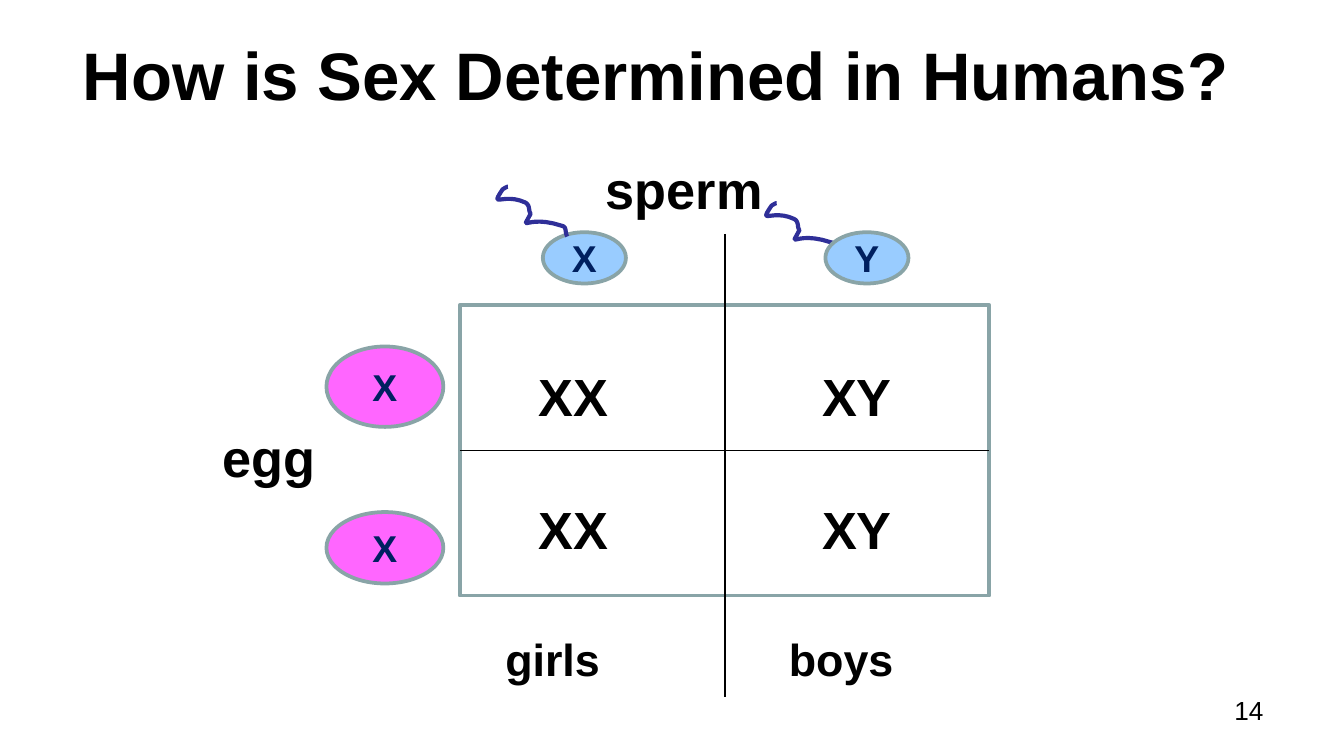
from typing import NamedTuple

import pptx
import pptx.dml.color
import pptx.enum.shapes
import pptx.enum.text
import pptx.oxml
import pptx.oxml.ns
import pptx.util

Cm = pptx.util.Cm
Pt = pptx.util.Pt
ALIGN = pptx.enum.text.PP_ALIGN
ANCHOR = pptx.enum.text.MSO_ANCHOR

COLOURS = {
    "black": "000000",
    "outline": "89A4A7",
    "sperm": "99CCFF",
    "tail": "2F2F98",
    "egg": "FF66FF",
    "chromosome": "002060",
}

SQUARE_LEFT, SQUARE_TOP, SQUARE_WIDTH, SQUARE_HEIGHT = 8.69, 5.77, 10.01, 5.49
SQUARE_MIDDLE = SQUARE_LEFT + SQUARE_WIDTH / 2

# Bezier points of a tail in cm, measured from the sperm head
TAIL = [
    (0, 0), (-0.05, -0.08), (0, -0.18), (-0.10, -0.20),
    (-0.79, -0.43), (-0.89, -0.05), (-0.69, -0.43),
    (-0.74, -0.48), (-0.69, -0.58), (-0.79, -0.64),
    (-1.22, -0.84), (-1.47, -0.51), (-1.22, -0.89),
    (-1.19, -0.91), (-1.14, -0.94), (-1.12, -0.94),
]
CURVE_STEPS = 12


class Label(NamedTuple):
    text: str
    left: float
    top: float
    width: float
    height: float = 1.35
    size: int = 28
    bold: bool = True
    align: ALIGN = ALIGN.LEFT


class Cell(NamedTuple):
    chromosome: str
    kind: str
    left: float
    top: float
    width: float
    height: float


GENOTYPES = [
    Label(text, left, top, 2.74)
    for top in (6.76, 9.27)
    for text, left in (("XX", 9.93), ("XY", 15.29))
]
LABELS = [
    Label("sperm", 11.2, 2.84, 5.21),
    Label("egg", 3.96, 7.92, 3.4),
    *GENOTYPES,
    Label("girls", 9.3, 11.81, 3.43, 1.19, 24),
    Label("boys", 14.66, 11.81, 3.73, 1.19, 24),
    Label("14", 18.21, 13.0, 5.92, 0.99, 14, False, ALIGN.RIGHT),
]
SPERM_X = Cell("X", "sperm", 10.26, 4.39, 1.57, 0.97)
SPERM_Y = Cell("Y", "sperm", 15.6, 4.39, 1.57, 0.97)
EGGS = [
    Cell("X", "egg", 6.17, 6.55, 2.21, 1.52),
    Cell("X", "egg", 6.17, 9.68, 2.21, 1.35),
]


def rgb(name: str) -> pptx.dml.color.RGBColor:
    return pptx.dml.color.RGBColor.from_string(COLOURS[name])


def set_line(item, colour: str, width: float) -> None:
    item.line.color.rgb = rgb(colour)
    item.line.width = Pt(width)


def set_text(shape, text: str, size: int, colour: str, bold: bool, align: ALIGN) -> None:
    shape.text_frame.text = text
    paragraph = shape.text_frame.paragraphs[0]
    paragraph.alignment = align
    paragraph.font.name = "Arial"
    paragraph.font.size = Pt(size)
    paragraph.font.bold = bold
    paragraph.font.color.rgb = rgb(colour)


def add_label(slide, label: Label) -> None:
    box = slide.shapes.add_textbox(
        Cm(label.left), Cm(label.top), Cm(label.width), Cm(label.height))
    box.text_frame.word_wrap = True
    set_text(box, label.text, label.size, "black", label.bold, label.align)


def add_cell(slide, cell: Cell) -> None:
    oval = slide.shapes.add_shape(
        pptx.enum.shapes.MSO_SHAPE.OVAL,
        Cm(cell.left), Cm(cell.top), Cm(cell.width), Cm(cell.height))
    oval.shadow.inherit = False
    oval.fill.solid()
    oval.fill.fore_color.rgb = rgb(cell.kind)
    set_line(oval, "outline", 2)
    oval.text_frame.vertical_anchor = ANCHOR.MIDDLE
    set_text(oval, cell.chromosome, 20, "chromosome", True, ALIGN.CENTER)


def add_tail(slide, left: float, top: float) -> None:
    """Draw the tail as short segments along its Bezier curves."""
    points = []
    for start in range(0, len(TAIL) - 1, 3):
        a, b, c, d = TAIL[start:start + 4]
        for step in range(1, CURVE_STEPS + 1):
            t = step / CURVE_STEPS
            u = 1 - t
            x, y = (
                u**3 * a[i] + 3 * u * u * t * b[i] + 3 * u * t * t * c[i] + t**3 * d[i]
                for i in (0, 1))
            points.append((Cm(left + x), Cm(top + y)))
    builder = slide.shapes.build_freeform(Cm(left), Cm(top))
    builder.add_line_segments(points, close=False)
    tail = builder.convert_to_shape()
    tail.shadow.inherit = False
    tail.fill.background()
    set_line(tail, "tail", 2.25)


def add_divider(slide, x1: float, y1: float, x2: float, y2: float):
    divider = slide.shapes.add_connector(
        pptx.enum.shapes.MSO_CONNECTOR.STRAIGHT, Cm(x1), Cm(y1), Cm(x2), Cm(y2))
    set_line(divider, "black", 1)
    divider._element.spPr.append(pptx.oxml.parse_xml(
        f"<a:effectLst {pptx.oxml.ns.nsdecls('a')}/>"))
    return divider


def add_punnett_square(slide) -> None:
    square = slide.shapes.add_shape(
        pptx.enum.shapes.MSO_SHAPE.RECTANGLE,
        Cm(SQUARE_LEFT), Cm(SQUARE_TOP), Cm(SQUARE_WIDTH), Cm(SQUARE_HEIGHT))
    square.shadow.inherit = False
    square.fill.background()
    set_line(square, "outline", 2)
    add_divider(slide, SQUARE_MIDDLE, 4.42, SQUARE_MIDDLE, 13.18)
    middle = SQUARE_TOP + SQUARE_HEIGHT / 2
    row_divider = add_divider(
        slide, SQUARE_LEFT, middle, SQUARE_LEFT + SQUARE_WIDTH, middle)
    row_divider.begin_connect(square, 1)
    row_divider.end_connect(square, 3)


def add_title(slide, text: str) -> None:
    title = slide.shapes.title
    title.left, title.top, title.width, title.height = (
        Cm(0.97), Cm(0.2), Cm(22.86), Cm(2.39))
    set_text(title, text, 36, "black", True, ALIGN.CENTER)
    title.text_frame.vertical_anchor = ANCHOR.MIDDLE
    title.text_frame.auto_size = pptx.enum.text.MSO_AUTO_SIZE.NONE


def main() -> None:
    presentation = pptx.Presentation()
    presentation.slide_width = Cm(25.4)
    presentation.slide_height = Cm(14.29)
    slide = presentation.slides.add_slide(presentation.slide_layouts[5])
    add_title(slide, "How is Sex Determined in Humans?")
    add_punnett_square(slide)
    for label in LABELS:
        add_label(slide, label)
    add_cell(slide, SPERM_X)
    add_tail(slide, 10.72, 4.47)
    add_tail(slide, 15.8, 4.78)
    for cell in (*EGGS, SPERM_Y):
        add_cell(slide, cell)
    presentation.save("out.pptx")


if __name__ == "__main__":
    main()
